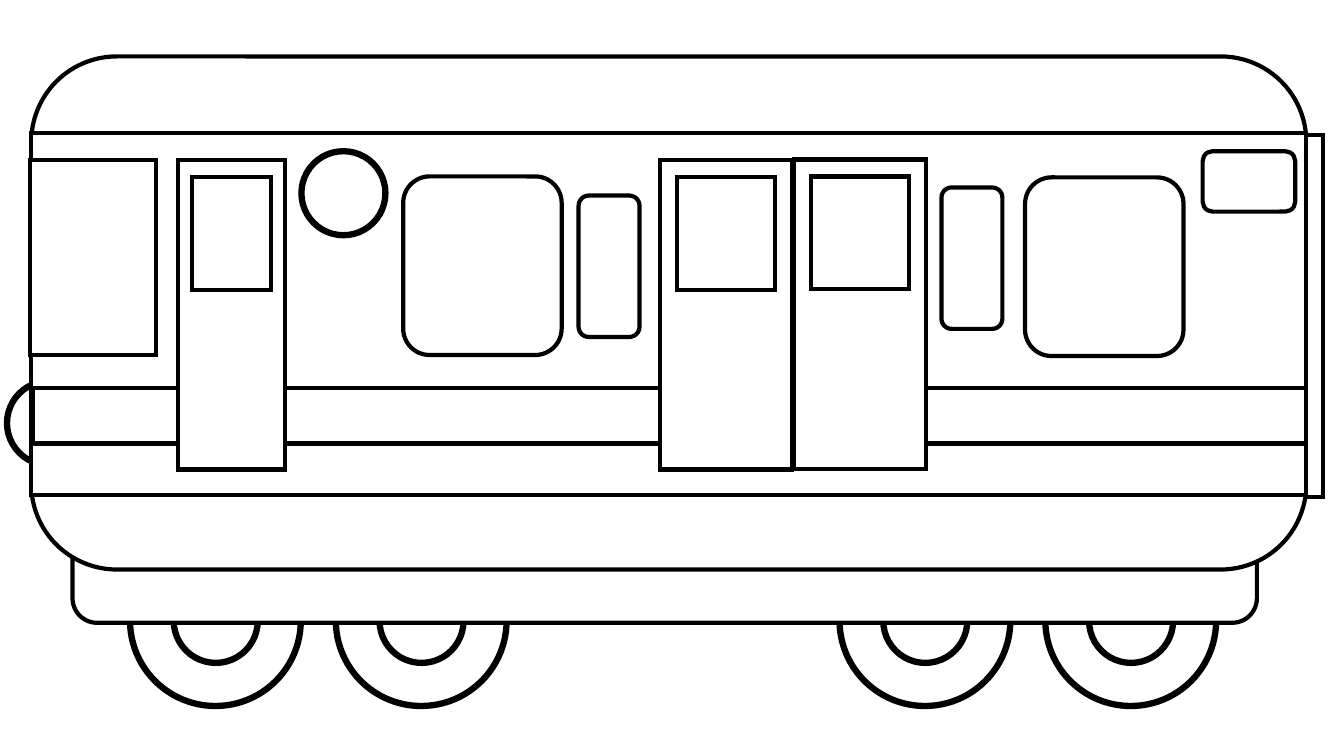
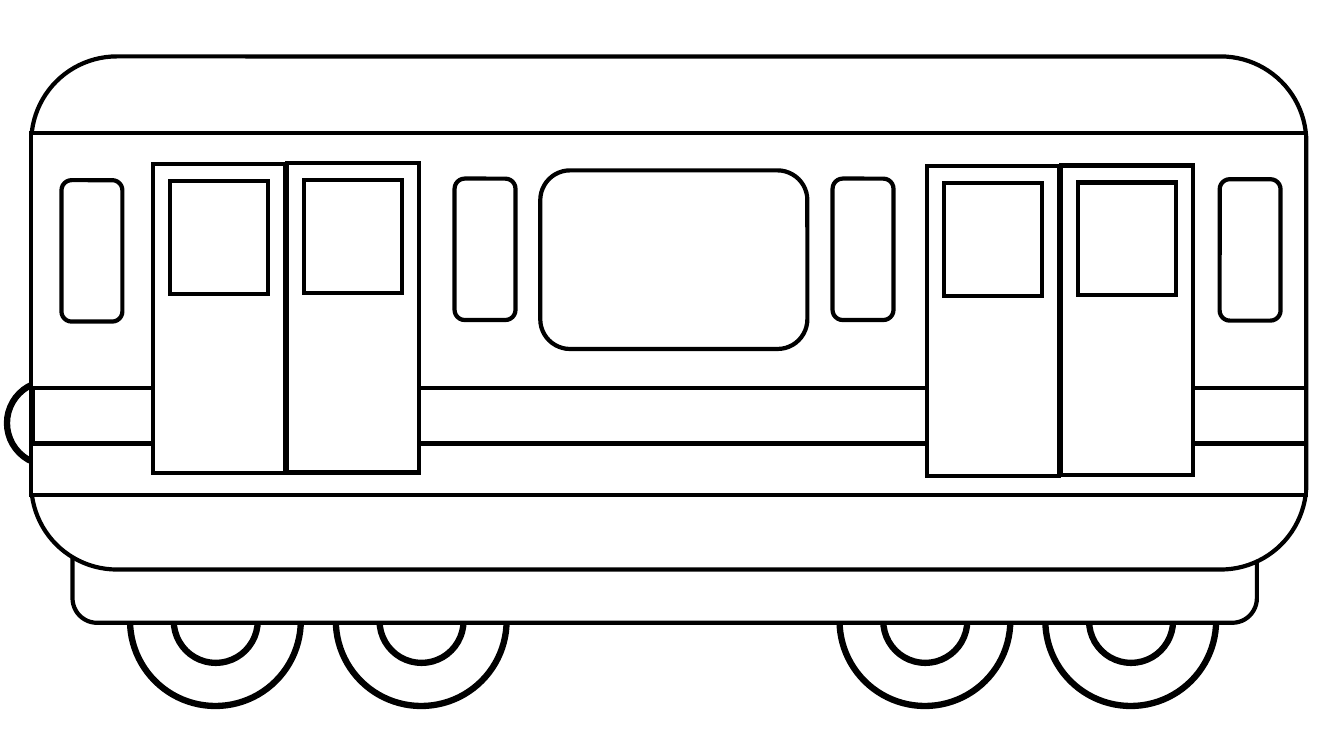
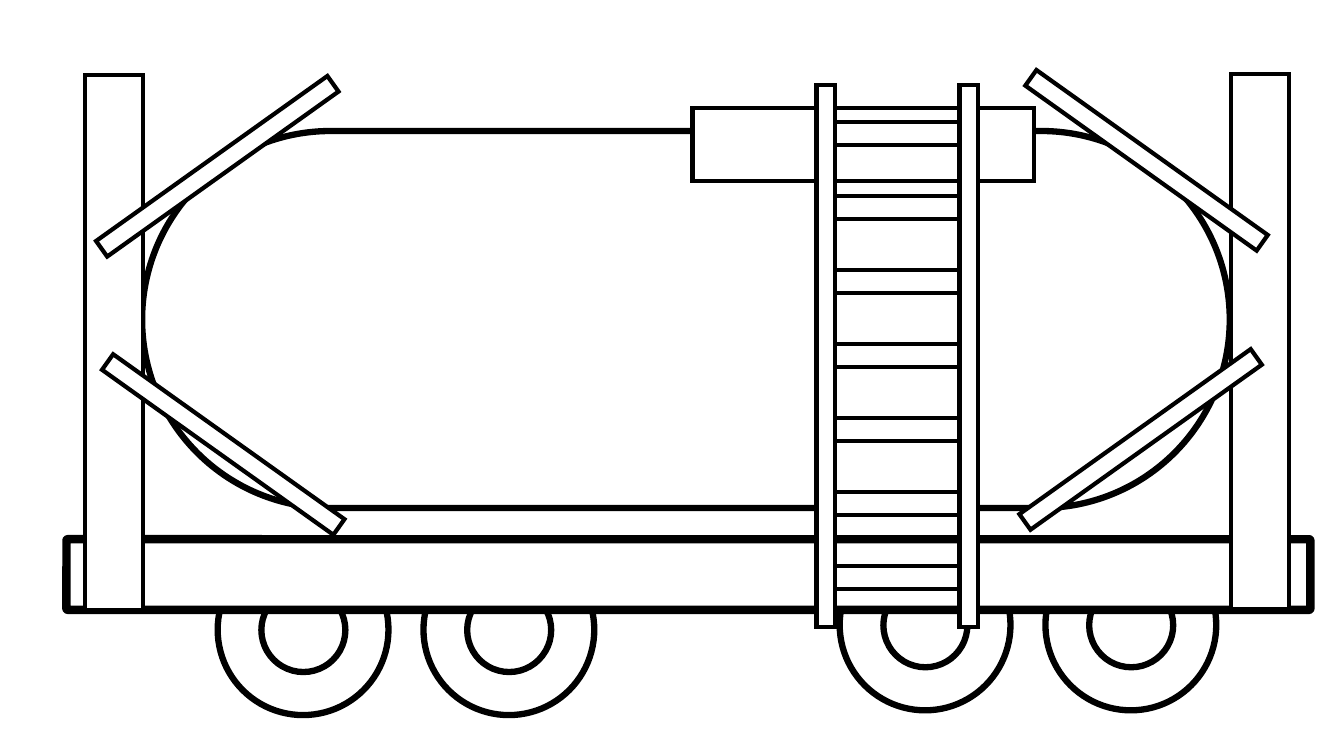
from dataclasses import dataclass
from typing import NamedTuple

from lxml import etree
from pptx import Presentation
from pptx.dml.color import RGBColor
from pptx.enum.shapes import MSO_SHAPE
from pptx.oxml.ns import qn
from pptx.util import Pt

RECT = MSO_SHAPE.RECTANGLE
ROUND = MSO_SHAPE.ROUNDED_RECTANGLE
OVAL = MSO_SHAPE.OVAL


@dataclass(frozen=True)
class Theme:
    ink: RGBColor = RGBColor(0, 0, 0)
    paper: RGBColor = RGBColor(255, 255, 255)
    thin: float = 3
    medium: float = 4.5
    thick: float = 6


THEME = Theme()


class Box(NamedTuple):
    left: float
    top: float
    width: float
    height: float

    def inner(self, left, top, width, height):
        return Box(self.left + left, self.top + top, width, height)


def outline(owner, kind, box, weight=THEME.thin, filled=True):
    shape = owner.shapes.add_shape(kind, *(Pt(length) for length in box))
    shape.shadow.inherit = False
    if filled:
        shape.fill.solid()
        shape.fill.fore_color.rgb = THEME.paper
    else:
        shape.fill.background()
    shape.line.color.rgb = THEME.ink
    shape.line.width = Pt(weight)
    border = shape.element.spPr.find(qn("a:ln"))
    etree.SubElement(border, qn("a:miter"), lim="800000")
    return shape


def ring(owner, box):
    return outline(owner, OVAL, box, THEME.medium, filled=False)


def bogie(page, box):
    for index in range(2):
        wheel = page.shapes.add_group_shape()
        rim = box.inner(index * 147, 0, 122, 122)
        ring(wheel, rim)
        ring(wheel, rim.inner(31.2, 31.2, 60, 60))


def door(owner, box, inset=12.2):
    outline(owner, RECT, box)
    outline(owner, RECT, box.inner(inset, 12.2, box.width - 2 * inset, 80.6))


def double_door(page, box):
    group = page.shapes.add_group_shape()
    door(group, box.inner(0, 0, 94.3, 221))
    door(group, box.inner(95.5, -0.6, 94.3, 221))


def wide_window(page, box):
    outline(page, ROUND, box.inner(0, 0, 113.2, 127.6))


def narrow_window(page, box):
    outline(page, ROUND, box.inner(0, 0, 43.5, 101))


def carriage(page, body):
    ring(page, body.inner(-17.3, 231.9, 60, 60))
    for left in (70.6, 577.4):
        bogie(page, body.inner(left, 342, 269, 122))
    outline(page, ROUND, body.inner(29.5, 299.5, 846, 105.1))
    outline(page, ROUND, body)
    outline(page, RECT, body.inner(0, 54.7, body.width, 258.5))
    outline(page, RECT, body.inner(1.5, 236.9, body.width - 1.5, 39.6))


def cab_carriage(page, body):
    carriage(page, body)
    outline(page, RECT, body.inner(-0.7, 74.2, 90, 139))
    door(page, body.inner(105.1, 74.2, 76.3, 221), inset=9.8)
    double_door(page, body.inner(449.3, 74.2, 190, 221))
    ring(page, body.inner(193, 67.7, 60, 60))
    outline(page, ROUND, body.inner(836.7, 67.7, 66.2, 43.2))
    for left, top in ((265.7, 85.7), (709.9, 86.4)):
        wide_window(page, body.inner(left, top, 113, 127))
    for left, top in ((391, 99.4), (650.2, 93.6)):
        narrow_window(page, body.inner(left, top, 43, 101))
    outline(page, RECT, body.inner(body.width, 56.2, 12.2, 258.5))


def passenger_carriage(page, body):
    carriage(page, body)
    for left, top in ((640.1, 78.5), (87.1, 76.8)):
        double_door(page, body.inner(left, top, 190, 221))
    outline(page, ROUND, body.inner(363.6, 81.4, 190.8, 127.6))
    for left, top in ((21.6, 88.4), (302.4, 87.3), (572.4, 87.3), (848.9, 87.7)):
        narrow_window(page, body.inner(left, top, 43, 101))


def ladder(page, box):
    rail = 13
    for index in range(7):
        outline(page, RECT, box.inner(9, 26.5 + index * 52.9, 98.6, 16.6))
    for left in (0, box.width - rail):
        outline(page, RECT, box.inner(left, 0, rail, box.height))


def brace(page, frame, center_x, center_y, angle):
    width, length = 13.7, 203
    bar = outline(page, RECT, frame.inner(
        center_x - width / 2, center_y - length / 2, width, length))
    bar.rotation = angle


def tank_wagon(page, frame):
    for left, top in ((108, 336.2), (552.3, 332.8)):
        bogie(page, frame.inner(left, top, 269, 122))
    chassis = outline(page, ROUND, frame.inner(0, 332.6, frame.width, 50.4), THEME.thick)
    chassis.adjustments[0] = 0.02
    tank = outline(page, ROUND, frame.inner(54, 41, 776.9, 269.3), THEME.medium)
    tank.adjustments[0] = 0.5
    for left, top in ((831.6, 0), (13, 1.2)):
        outline(page, RECT, frame.inner(left, top, 41.8, 382.3))
    lean = 54.5
    for center_x, center_y, angle in (
        (107.7, 66.2, lean),
        (112, 264.9, -lean),
        (771.5, 61.9, -lean),
        (767.2, 261.3, lean),
    ):
        brace(page, frame, center_x, center_y, angle)
    outline(page, RECT, frame.inner(447.1, 24.4, 244.1, 52.6))
    ladder(page, frame.inner(535.7, 7.9, 115.2, 387.4))


def main():
    deck = Presentation()
    deck.slide_width, deck.slide_height = Pt(960), Pt(540)
    blank = deck.slide_layouts[6]
    body = Box(22.3, 40.3, 910.8, 366.5)
    frame = Box(47.5, 52.6, 888.5, 383)
    for draw, box in (
        (cab_carriage, body),
        (passenger_carriage, body),
        (tank_wagon, frame),
    ):
        draw(deck.slides.add_slide(blank), box)
    deck.save("out.pptx")


if __name__ == "__main__":
    main()
